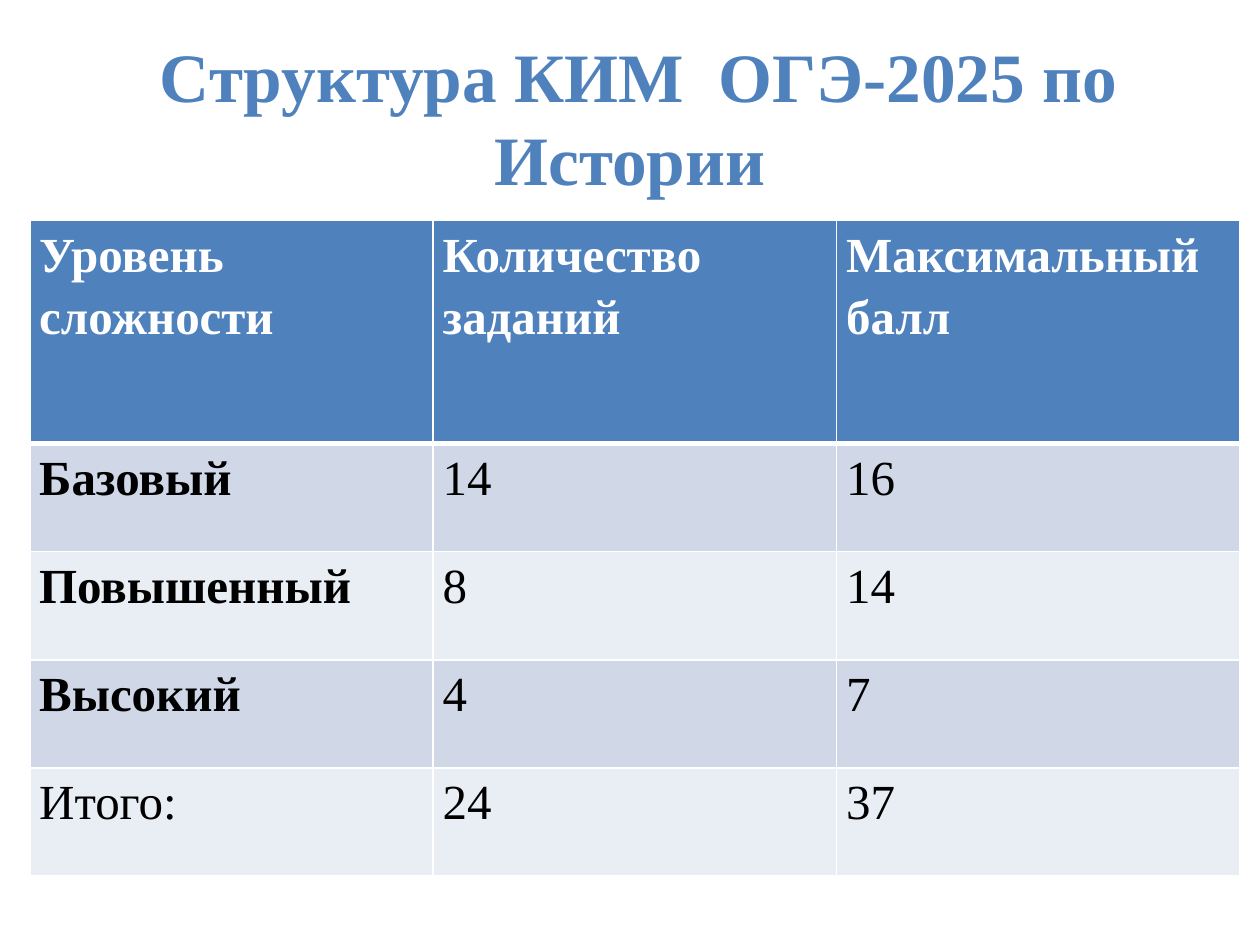
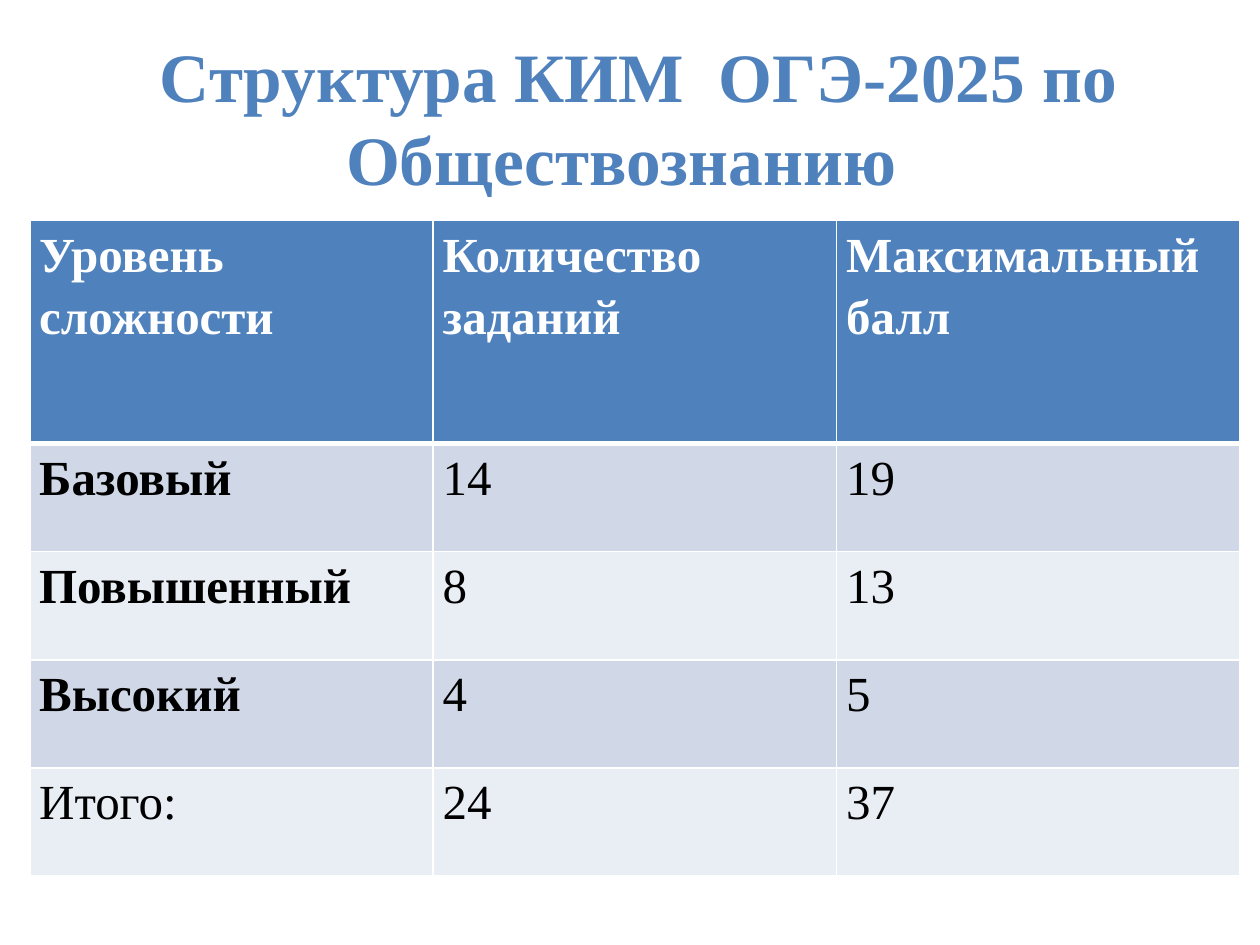
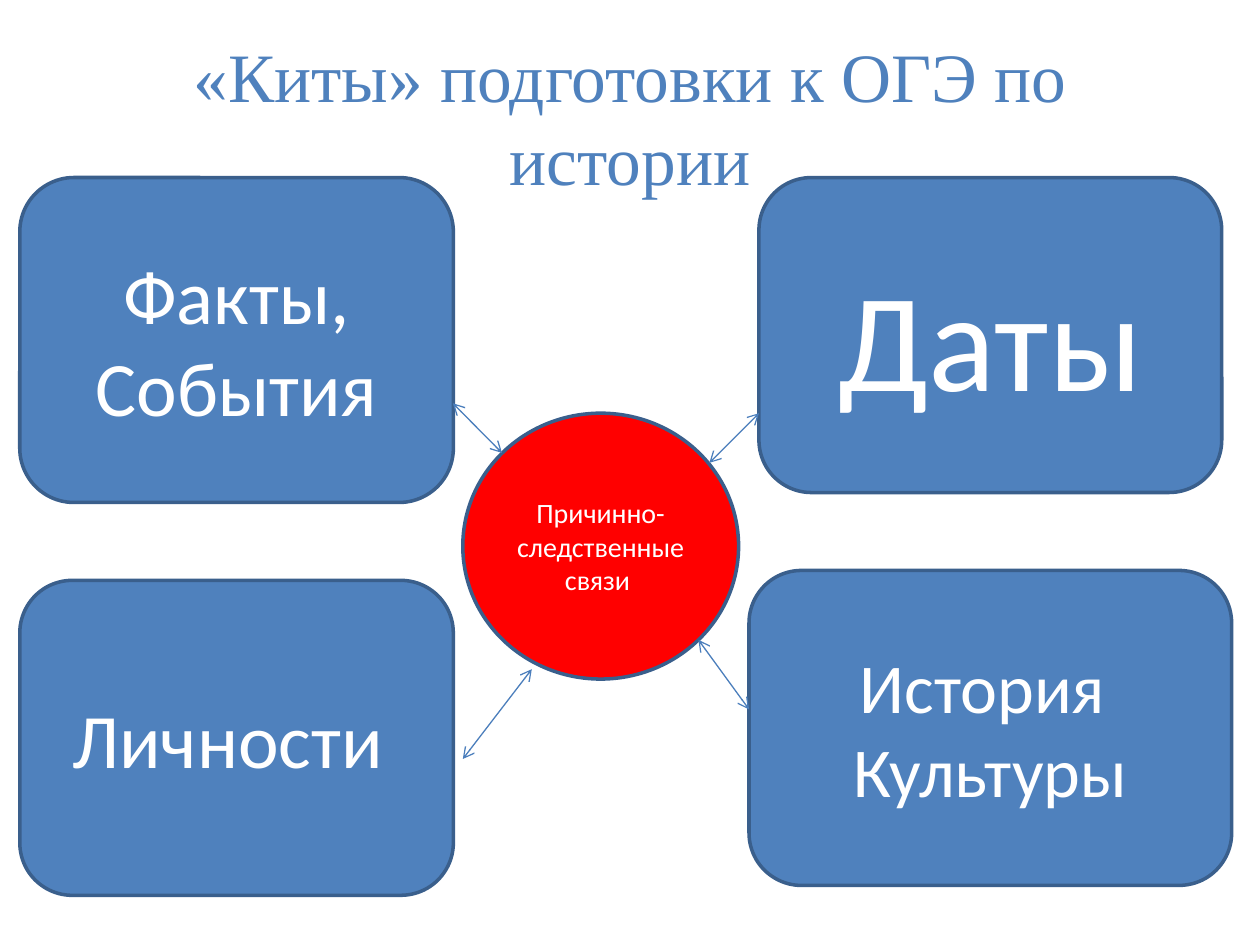
from dataclasses import dataclass

from lxml import etree
from pptx import Presentation
from pptx import util as u
from pptx.dml.color import RGBColor
from pptx.enum import shapes, text
from pptx.oxml import ns


@dataclass(frozen=True)
class Theme:
    blue: str = "4F81BD"
    outline: str = "3A5F8C"
    arrow: str = "4B7EBC"
    red: str = "FF0000"
    white: str = "FFFFFF"
    black: str = "000000"
    bands: tuple = ("D0D8E8", "E9EDF4")
    serif: str = "Times New Roman"
    sans: str = "Calibri"
    title_size: float = 39.6
    table_size: float = 28


THEME = Theme()

HEADER = ("Уровень сложности", "Количество  заданий", "Максимальный балл ")
LEVELS = ("Базовый", "Повышенный", "Высокий", "Итого:")
TASKS = (14, 8, 4, 24)
EXAMS = [
    (" Структура КИМ  ОГЭ-2025 по Истории", (16, 14, 7, 37)),
    (" Структура КИМ  ОГЭ-2025 по Обществознанию ", (19, 13, 5, 37)),
]

WHALES_TITLE = "«Киты» подготовки к ОГЭ по истории"
# text, type size, (left, top, width, height) in cm
WHALES = [
    ("Факты,\nСобытия", 44, (0.4, 3.58, 8.74, 6.55)),
    ("Даты", 80, (15.3, 3.58, 9.33, 6.35)),
    ("Личности ", 44, (0.4, 11.7, 8.74, 6.35)),
    ("История  Культуры", 40, (15.1, 11.5, 9.73, 6.35)),
]
CENTRE = ("Причинно-следственные связи ", 16, (9.33, 8.33, 5.56, 5.36))
# start x, start y, end x, end y in cm
ARROWS = [
    (10.72, 13.49, 9.33, 15.3),
    (14.3, 9.33, 15.3, 8.33),
    (14.08, 12.9, 15.1, 14.3),
    (9.13, 8.13, 10.12, 9.13),
]

TABLE_BOX = (0.6, 4.45, 24.4, 13.2)
HEADER_HEIGHT, ROW_HEIGHT = 4.49, 2.18
CELL_INSET = 0.19


def cm(values):
    return [u.Cm(value) for value in values]


def style_para(para, font, size, color, bold=False, align=text.PP_ALIGN.CENTER):
    para.alignment = align
    for span in para.runs:
        span.font.name = font
        span.font.size = u.Pt(size)
        span.font.bold = bold
        span.font.color.rgb = RGBColor.from_string(color)


def add_page(deck, title, bold):
    page = deck.slides.add_slide(deck.slide_layouts[5])
    box = page.shapes.title
    box.left, box.top, box.width, box.height = cm((1.27, 0.76, 22.86, 3.18))
    frame = box.text_frame
    frame.text = title
    frame.auto_size = text.MSO_AUTO_SIZE.NONE
    frame.vertical_anchor = text.MSO_ANCHOR.MIDDLE
    style_para(frame.paragraphs[0], THEME.serif, THEME.title_size, THEME.blue, bold)
    return page


def set_borders(cell, widths):
    """Draw white borders; widths are points for left, right, top and bottom."""
    props = cell._tc.get_or_add_tcPr()
    for index, (side, width) in enumerate(zip("LRTB", widths)):
        line = etree.Element(ns.qn(f"a:ln{side}"), w=str(u.Pt(width)))
        fill = etree.SubElement(line, ns.qn("a:solidFill"))
        etree.SubElement(fill, ns.qn("a:srgbClr"), val=THEME.white)
        props.insert(index, line)


def fill_cell(cell, value, row, column):
    is_header = row == 0
    is_level = column == 0 and row < len(LEVELS)
    fill = THEME.blue if is_header else THEME.bands[(row - 1) % 2]
    cell.fill.solid()
    cell.fill.fore_color.rgb = RGBColor.from_string(fill)
    cell.margin_left = cell.margin_right = u.Cm(CELL_INSET)
    cell.margin_top = cell.margin_bottom = 0
    cell.text_frame.text = str(value)
    para = cell.text_frame.paragraphs[0]
    para.line_spacing = 1.15
    style_para(para, THEME.serif, THEME.table_size,
               THEME.white if is_header else THEME.black,
               is_header or is_level, text.PP_ALIGN.JUSTIFY)
    set_borders(cell, (1, 1, 3 if row == 1 else 1, 3 if is_header else 1))


def add_exam_page(deck, title, scores):
    page = add_page(deck, title, bold=True)
    rows = [HEADER, *zip(LEVELS, TASKS, scores)]
    table = page.shapes.add_table(len(rows), len(HEADER), *cm(TABLE_BOX)).table
    for row, values in enumerate(rows):
        table.rows[row].height = u.Cm(ROW_HEIGHT if row else HEADER_HEIGHT)
        for column, value in enumerate(values):
            fill_cell(table.cell(row, column), value, row, column)


def add_bubble(page, kind, fill, wording, size, place):
    bubble = page.shapes.add_shape(kind, *cm(place))
    bubble.shadow.inherit = False
    bubble.fill.solid()
    bubble.fill.fore_color.rgb = RGBColor.from_string(fill)
    bubble.line.color.rgb = RGBColor.from_string(THEME.outline)
    bubble.line.width = u.Pt(2)
    frame = bubble.text_frame
    frame.text = wording
    frame.word_wrap = True
    frame.vertical_anchor = text.MSO_ANCHOR.MIDDLE
    for para in frame.paragraphs:
        style_para(para, THEME.sans, size, THEME.white)


def add_double_arrow(page, ends):
    arrow = page.shapes.add_connector(shapes.MSO_CONNECTOR.STRAIGHT, *cm(ends))
    arrow.line.color.rgb = RGBColor.from_string(THEME.arrow)
    arrow.line.width = u.Pt(0.75)
    line = arrow.line._get_or_add_ln()
    for end in ("headEnd", "tailEnd"):
        etree.SubElement(line, ns.qn(f"a:{end}"), type="arrow")
    etree.SubElement(arrow._element.spPr, ns.qn("a:effectLst"))


def add_whales_page(deck):
    page = add_page(deck, WHALES_TITLE, bold=False)
    for whale in WHALES:
        add_bubble(page, shapes.MSO_SHAPE.ROUNDED_RECTANGLE, THEME.blue, *whale)
    add_bubble(page, shapes.MSO_SHAPE.OVAL, THEME.red, *CENTRE)
    for ends in ARROWS:
        add_double_arrow(page, ends)


def main():
    deck = Presentation()
    deck.slide_width, deck.slide_height = cm((25.4, 19.05))
    for title, scores in EXAMS:
        add_exam_page(deck, title, scores)
    add_whales_page(deck)
    deck.save("out.pptx")


if __name__ == "__main__":
    main()
